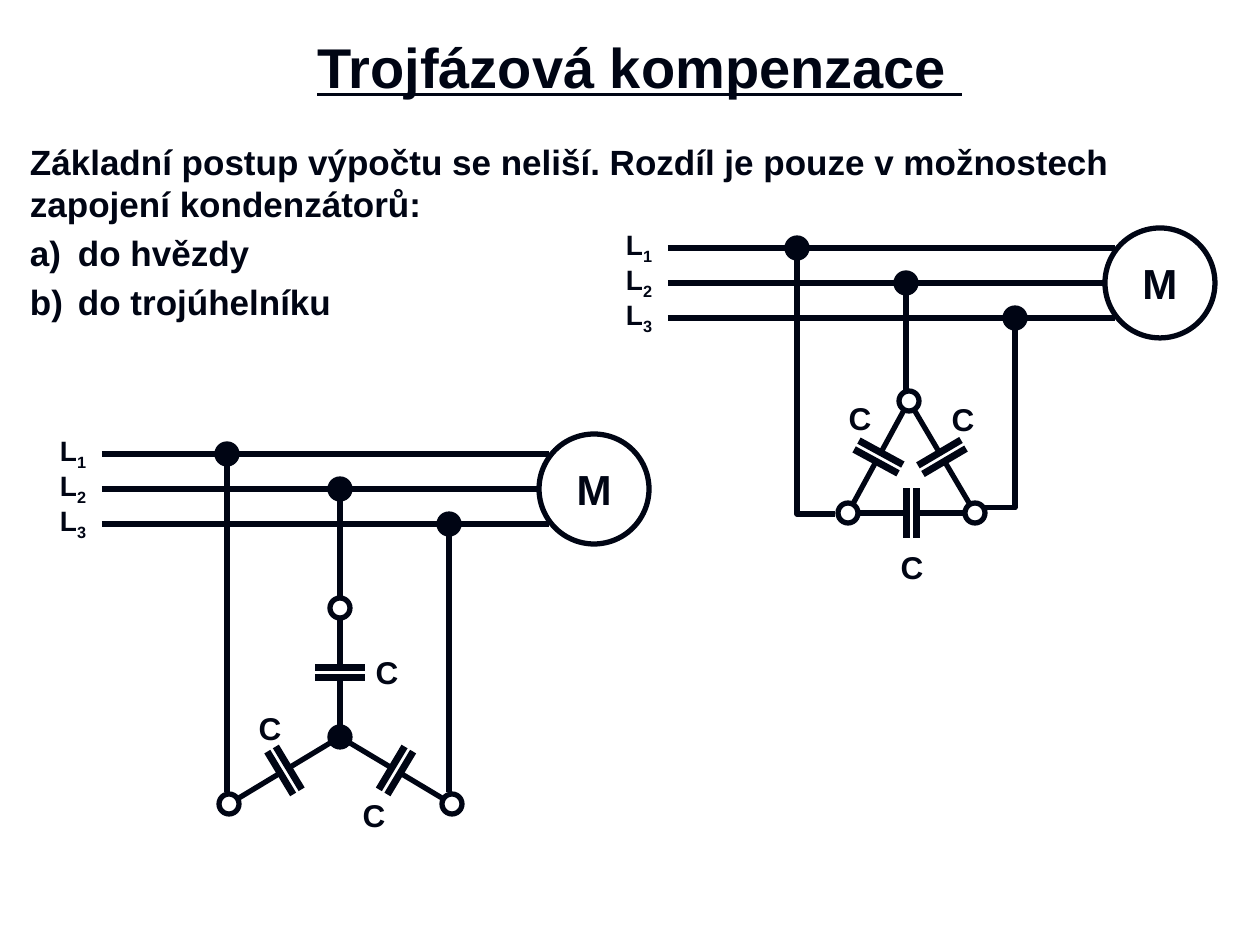
import math

from lxml import etree
from pptx import Presentation
from pptx import util as u
from pptx.dml.color import RGBColor
from pptx.enum import shapes, text
from pptx.oxml.ns import qn

PX = 914400 / 126
COLORS = {"ink": "000514"}
INK = RGBColor.from_string(COLORS["ink"])
FONT = "Arial"
DOT = 20
MOTOR = 110
PHASE_ROWS = (19, 54, 89)


def emu(*lengths):
    return [round(length * PX) for length in lengths]


def style_span(span, size):
    span.font.name = FONT
    span.font.size = u.Pt(size)
    span.font.bold = True
    span.font.color.rgb = INK


def text_box(page, left, top, width, height, inset=5):
    box = page.shapes.add_textbox(*emu(left, top, width, height))
    frame = box.text_frame
    frame.word_wrap = True
    frame.margin_left = frame.margin_right = emu(inset)[0]
    frame.margin_top = frame.margin_bottom = emu(inset)[0]
    return frame


def label(page, center, words, size, subscript=""):
    """Centre a short label on a point, with an optional subscript."""
    width, height = 60, 50
    frame = text_box(page, center[0] - width / 2, center[1] - height / 2,
                     width, height)
    frame.word_wrap = False
    frame.vertical_anchor = text.MSO_ANCHOR.MIDDLE
    para = frame.paragraphs[0]
    para.alignment = text.PP_ALIGN.CENTER
    para.text = words
    if subscript:
        lowered = para.add_run()
        lowered.text = subscript
        lowered.font._element.set("baseline", "-25000")
    for span in para.runs:
        style_span(span, size)


def wire(page, start, end, weight=3, kind=shapes.MSO_CONNECTOR.STRAIGHT):
    line = page.shapes.add_connector(kind, *emu(*start, *end))
    line.line.color.rgb = INK
    line.line.width = u.Pt(weight)
    etree.SubElement(line._element.spPr, qn("a:effectLst"))
    return line


def corner_wire(page, start, end):
    """Run horizontally from start, then vertically to end."""
    line = wire(page, start, end, kind=shapes.MSO_CONNECTOR.ELBOW)
    line._element.spPr.find(qn("a:prstGeom")).set("prst", "bentConnector2")


def circle(page, center, diameter=DOT, filled=False):
    left, top = (value - diameter / 2 for value in center)
    disc = page.shapes.add_shape(shapes.MSO_SHAPE.OVAL,
                                 *emu(left, top, diameter, diameter))
    disc.shadow.inherit = False
    disc.line.color.rgb = INK
    disc.line.width = u.Pt(3)
    if filled:
        disc.fill.solid()
        disc.fill.fore_color.rgb = INK
    else:
        disc.fill.background()


def capacitor(page, start, end):
    """Draw leads and two plates between the centres of two nodes."""
    length = math.dist(start, end)
    along = [(b - a) / length for a, b in zip(start, end)]

    def point(distance, aside=0):
        return (start[0] + along[0] * distance - along[1] * aside,
                start[1] + along[1] * distance + along[0] * aside)

    for plate, node in ((length / 2 - 5, DOT / 2),
                        (length / 2 + 5, length - DOT / 2)):
        wire(page, point(node), point(plate))
        wire(page, point(plate, -25), point(plate, 25), weight=4)


def shift(origin, *points):
    return [(origin[0] + x, origin[1] + y) for x, y in points]


def motor_supply(page, origin, taps):
    """Draw three labelled phases feeding a motor; return the tap points."""
    motor_center, = shift(origin, (540, 54))
    circle(page, motor_center, MOTOR)
    label(page, motor_center, "M", 24)
    for number, (row, reach) in enumerate(zip(PHASE_ROWS, (495, 485, 495)), 1):
        start, end, name = shift(origin, (48, row), (reach, row), (19, row - 1))
        wire(page, start, end)
        label(page, name, "L", 16, str(number))
    nodes = shift(origin, *zip(taps, PHASE_ROWS))
    for node in nodes:
        circle(page, node, filled=True)
    return nodes


def capacitor_bank(page, pairs, terminals, names):
    for start, end in pairs:
        capacitor(page, start, end)
    for terminal in terminals:
        circle(page, terminal)
    for name in names:
        label(page, name, "C", 18)


def star_circuit(page, origin):
    nodes = motor_supply(page, origin, (173, 286, 395))
    center, left, top, right = shift(origin, (286, 302), (175, 369),
                                     (286, 173), (398, 369))
    terminals = (left, top, right)
    names = shift(origin, (333, 237), (320, 380), (216, 293))
    capacitor_bank(page, [(center, end) for end in terminals], terminals, names)
    circle(page, center, filled=True)
    for node, terminal in zip(nodes, terminals):
        wire(page, node, (node[0], terminal[1] - 12))


def delta_circuit(page, origin):
    nodes = motor_supply(page, origin, (177, 286, 395))
    left, top, right = terminals = shift(origin, (228, 284), (289, 172),
                                         (355, 284))
    names = shift(origin, (343, 190), (240, 189), (292, 338))
    capacitor_bank(page, [(left, top), (top, right), (right, left)],
                   terminals, names)
    wire(page, nodes[1], (nodes[1][0], top[1] - 9))
    corner_wire(page, (left[0] - 13, left[1] + 1), nodes[0])
    corner_wire(page, (right[0] + 10, right[1] - 5), nodes[2])


def title(page, left, top, width, height):
    frame = text_box(page, left, top, width, height)
    frame.vertical_anchor = text.MSO_ANCHOR.MIDDLE
    para = frame.paragraphs[0]
    para.text = "Trojfázová kompenzace "
    para.alignment = text.PP_ALIGN.CENTER
    style_span(para.runs[0], 32)
    para.runs[0].font.underline = True


def introduction(page, left, top, width, height):
    frame = text_box(page, left, top, width, height)
    frame.text = ("Základní postup výpočtu se neliší. Rozdíl je pouze "
                  "v možnostech zapojení kondenzátorů:\n"
                  "a)\tdo hvězdy\nb)\tdo trojúhelníku")
    for para in frame.paragraphs:
        para.space_before = u.Pt(4)
        style_span(para.runs[0], 20)
    indent = emu(48)[0]
    for para in frame.paragraphs[1:]:
        properties = para._p.get_or_add_pPr()
        properties.set("marL", str(indent))
        properties.set("indent", str(-indent))


def main():
    deck = Presentation()
    deck.slide_width, deck.slide_height = emu(1260, 945)
    page = deck.slides.add_slide(deck.slide_layouts[6])
    title(page, 65, 26, 1150, 80)
    introduction(page, 25, 135, 1200, 197)
    star_circuit(page, (54, 435))
    delta_circuit(page, (620, 229))
    deck.save("out.pptx")


if __name__ == "__main__":
    main()
